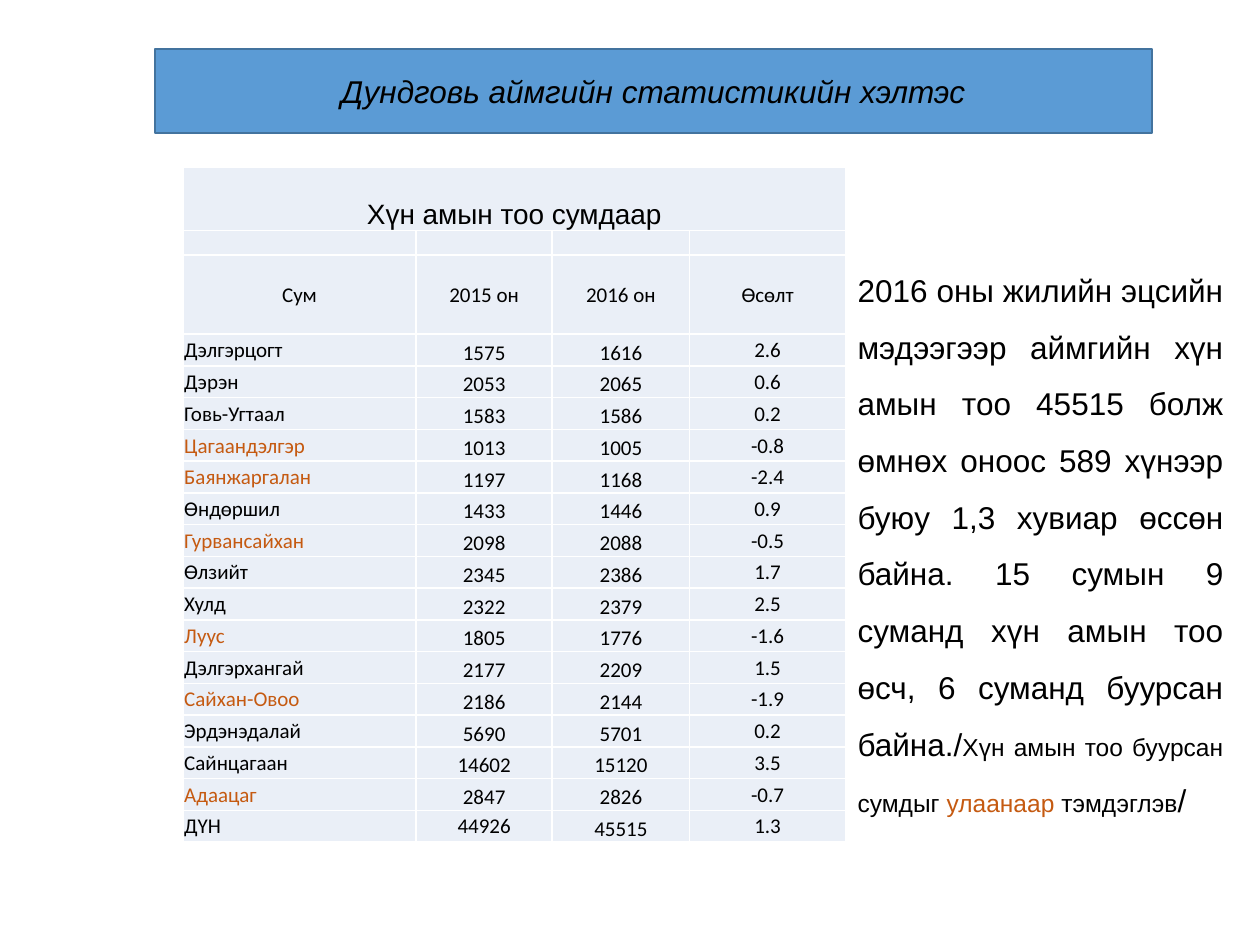
from typing import NamedTuple

from lxml.etree import SubElement
from pptx import Presentation
from pptx.dml.color import RGBColor
from pptx.enum.shapes import MSO_SHAPE
from pptx.enum.text import MSO_ANCHOR, PP_ALIGN
from pptx.oxml.ns import qn
from pptx.slide import Slide
from pptx.table import _Cell
from pptx.util import Pt

BLACK = RGBColor(0x00, 0x00, 0x00)
BLUE = RGBColor(0x5B, 0x9B, 0xD5)
DARK_BLUE = RGBColor(0x43, 0x73, 0x9E)
PALE_BLUE = RGBColor(0xEA, 0xEF, 0xF7)
RED = RGBColor(0xC5, 0x5A, 0x11)
WHITE = RGBColor(0xFF, 0xFF, 0xFF)

COLUMN_WIDTHS = (133.2, 77.8, 78.5, 89.2)
HEADING_HEIGHTS = (36.5, 14, 45.2)
DISTRICT_HEIGHT = 18.15
HEADERS = ("Сум", "2015 он", "2016 он", "Өсөлт")


class District(NamedTuple):
    name: str
    population_2015: int
    population_2016: int
    growth: float


class Passage(NamedTuple):
    text: str
    size: float
    color: RGBColor = BLACK


DISTRICTS = (
    District("Дэлгэрцогт", 1575, 1616, 2.6),
    District("Дэрэн", 2053, 2065, 0.6),
    District("Говь-Угтаал", 1583, 1586, 0.2),
    District("Цагаандэлгэр", 1013, 1005, -0.8),
    District("Баянжаргалан", 1197, 1168, -2.4),
    District("Өндөршил", 1433, 1446, 0.9),
    District("Гурвансайхан", 2098, 2088, -0.5),
    District("Өлзийт", 2345, 2386, 1.7),
    District("Хулд", 2322, 2379, 2.5),
    District("Луус", 1805, 1776, -1.6),
    District("Дэлгэрхангай", 2177, 2209, 1.5),
    District("Сайхан-Овоо", 2186, 2144, -1.9),
    District("Эрдэнэдалай", 5690, 5701, 0.2),
    District("Сайнцагаан", 14602, 15120, 3.5),
    District("Адаацаг", 2847, 2826, -0.7),
    District("ДҮН", 44926, 45515, 1.3),
)

SUMMARY = (
    Passage(
        "2016 оны жилийн эцсийн мэдээгээр аймгийн хүн амын тоо 45515 болж "
        "өмнөх оноос 589 хүнээр буюу 1,3 хувиар өссөн байна. 15 сумын 9 "
        "суманд хүн амын тоо өсч, 6 суманд буурсан байна./",
        18,
    ),
    Passage("Хүн амын тоо буурсан сумдыг ", 14),
    Passage("улаанаар", 14, RED),
    Passage(" тэмдэглэв", 14),
    Passage("/", 18),
)


def add_banner(slide: Slide, text: str) -> None:
    banner = slide.shapes.add_shape(
        MSO_SHAPE.RECTANGLE, Pt(88.6), Pt(28), Pt(569.5), Pt(48.2)
    )
    banner.shadow.inherit = False
    banner.fill.solid()
    banner.fill.fore_color.rgb = BLUE
    banner.line.color.rgb = DARK_BLUE
    banner.line.width = Pt(1)
    banner.text_frame.vertical_anchor = MSO_ANCHOR.MIDDLE
    paragraph = banner.text_frame.paragraphs[0]
    paragraph.text = text
    paragraph.alignment = PP_ALIGN.CENTER
    paragraph.font.name = "Arial"
    paragraph.font.size = Pt(18)
    paragraph.font.italic = True
    paragraph.font.color.rgb = BLACK


def add_summary(slide: Slide, passages: tuple[Passage, ...]) -> None:
    box = slide.shapes.add_textbox(Pt(483), Pt(130.3), Pt(223.2), Pt(351.4))
    box.text_frame.word_wrap = True
    box.text_frame.vertical_anchor = MSO_ANCHOR.MIDDLE
    paragraph = box.text_frame.paragraphs[0]
    paragraph.alignment = PP_ALIGN.JUSTIFY
    paragraph.line_spacing = 1.5
    paragraph.font.name = "Arial"
    for passage in passages:
        run = paragraph.add_run()
        run.text = passage.text
        run.font.size = Pt(passage.size)
        run.font.color.rgb = passage.color


def style_cell(cell: _Cell) -> None:
    cell.margin_left = cell.margin_right = cell.margin_top = Pt(0.7)
    cell.margin_bottom = Pt(0)
    properties = cell._tc.get_or_add_tcPr()
    for side in ("a:lnL", "a:lnR", "a:lnT", "a:lnB"):
        border = SubElement(properties, qn(side), w=str(Pt(1)))
        fill = SubElement(border, qn("a:solidFill"))
        SubElement(fill, qn("a:srgbClr"), val=str(WHITE))
    cell.fill.solid()
    cell.fill.fore_color.rgb = PALE_BLUE


def write_cell(
    cell: _Cell,
    text: str,
    alignment: PP_ALIGN = PP_ALIGN.CENTER,
    anchor: MSO_ANCHOR = MSO_ANCHOR.MIDDLE,
    color: RGBColor = BLACK,
    font_name: str = "Calibri",
    size: float = 12,
) -> None:
    cell.vertical_anchor = anchor
    paragraph = cell.text_frame.paragraphs[0]
    paragraph.text = text
    paragraph.alignment = alignment
    paragraph.font.name = font_name
    paragraph.font.size = Pt(size)
    paragraph.font.color.rgb = color


def add_population_table(slide: Slide) -> None:
    heights = HEADING_HEIGHTS + (DISTRICT_HEIGHT,) * len(DISTRICTS)
    frame = slide.shapes.add_table(
        len(heights), len(COLUMN_WIDTHS),
        Pt(104.6), Pt(95.3), Pt(sum(COLUMN_WIDTHS)), Pt(sum(heights)),
    )
    table = frame.table
    table.first_row = table.horz_banding = False
    for column, width in zip(table.columns, COLUMN_WIDTHS):
        column.width = Pt(width)
    for row, height in zip(table.rows, heights):
        row.height = Pt(height)
    for cell in table.iter_cells():
        style_cell(cell)

    table.cell(0, 0).merge(table.cell(0, len(COLUMN_WIDTHS) - 1))
    write_cell(
        table.cell(0, 0), "Хүн амын тоо сумдаар",
        anchor=MSO_ANCHOR.BOTTOM, font_name="Arial", size=16,
    )
    for column, header in enumerate(HEADERS):
        table.cell(1, column).text_frame.paragraphs[0].font.size = Pt(8)
        write_cell(table.cell(2, column), header)

    for row, district in enumerate(DISTRICTS, start=len(HEADING_HEIGHTS)):
        name_color = RED if district.growth < 0 else BLACK
        is_total = district is DISTRICTS[-1]
        earlier_anchor = MSO_ANCHOR.MIDDLE if is_total else MSO_ANCHOR.BOTTOM
        write_cell(
            table.cell(row, 0), district.name, PP_ALIGN.LEFT, color=name_color
        )
        write_cell(
            table.cell(row, 1), str(district.population_2015), anchor=earlier_anchor
        )
        write_cell(
            table.cell(row, 2), str(district.population_2016),
            anchor=MSO_ANCHOR.BOTTOM,
        )
        write_cell(table.cell(row, 3), str(district.growth))


def main() -> None:
    presentation = Presentation()
    presentation.slide_width = Pt(720)
    presentation.slide_height = Pt(540)
    slide = presentation.slides.add_slide(presentation.slide_layouts[6])
    add_banner(slide, "Дундговь аймгийн статистикийн хэлтэс")
    add_summary(slide, SUMMARY)
    add_population_table(slide)
    presentation.save("out.pptx")


if __name__ == "__main__":
    main()
